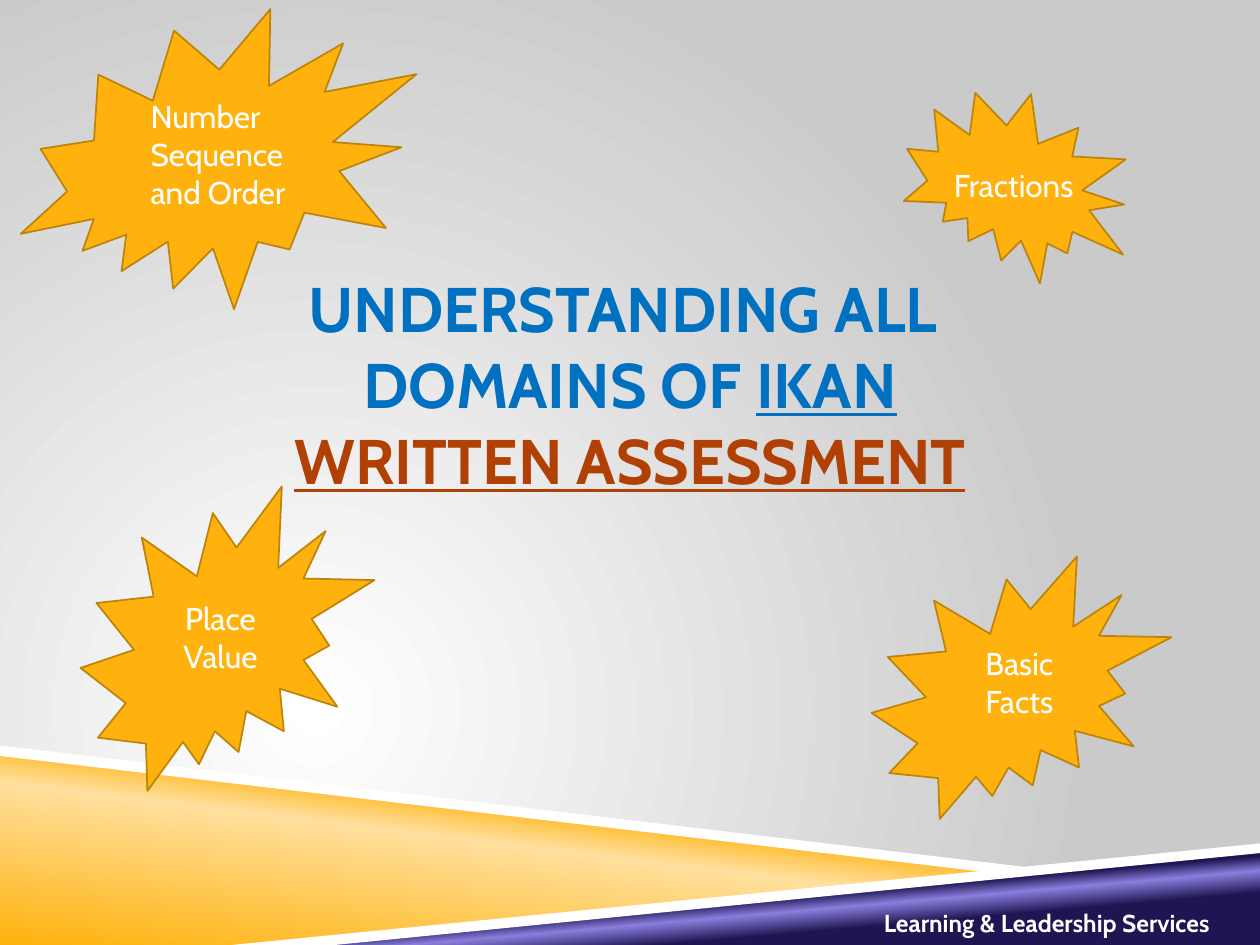
from lxml.etree import SubElement
from pptx import Presentation
from pptx.dml.color import RGBColor
from pptx.enum.shapes import MSO_SHAPE
from pptx.enum.text import MSO_ANCHOR, MSO_AUTO_SIZE, PP_ALIGN
from pptx.oxml.ns import qn
from pptx.util import Pt

WHITE = RGBColor(0xFF, 0xFF, 0xFF)
GREY = RGBColor(0xCA, 0xCA, 0xCA)
AMBER = RGBColor(0xFF, 0xB2, 0x0D)
PALE_AMBER = RGBColor(0xFF, 0xE0, 0x9E)
DARK_AMBER = RGBColor(0xBD, 0x84, 0x0A)
NAVY = RGBColor(0x1E, 0x16, 0x52)
LILAC = RGBColor(0x8B, 0x7F, 0xDD)
BLUE = RGBColor(0x00, 0x70, 0xC0)
RUST = RGBColor(0xB0, 0x40, 0x04)
FONT = "Cabin"
WIDTH, HEIGHT = 720, 540

TITLE_BOX = (36, 150, 648, 138)
TITLE_LINES = [
    [("UNDERSTANDING ALL ", BLUE, False)],
    [("DOMAINS OF ", BLUE, False), ("IKAN", BLUE, True)],
    [("WRITTEN ASSESSMENT", RUST, True)],
]
TITLE_SIZE = 36

BACKDROP_STOPS = [(0, WHITE), (100, GREY)]
AMBER_STOPS = [(0, AMBER), (52, PALE_AMBER), (66, AMBER)]
NAVY_STOPS = [(28, NAVY), (40, LILAC), (48, NAVY)]
BANDS = [
    ([(0, 430), (570, 498.5), (144, HEIGHT), (0, HEIGHT)], AMBER_STOPS, 277),
    ([(142.5, HEIGHT), (WIDTH, 484), (WIDTH, HEIGHT)], NAVY_STOPS, 265),
    ([(0, 426), (0, 432), (569, 499), (599, 497)], WHITE, None),
    ([(WIDTH, 482), (132.5, HEIGHT), (191.5, HEIGHT), (WIDTH, 487.5)], WHITE, None),
]

DOMAINS = [
    ("Basic Facts", (498, 318, 171.5, 150), 0, (556, 364.5, 78, 51), PP_ALIGN.LEFT),
    ("Place Value", (46, 278, 168, 174), 0, (87, 339, 78, 51), PP_ALIGN.CENTER),
    ("Fractions", (517.5, 50.5, 132, 114), 51.5, (538, 91.5, 86.5, 29), PP_ALIGN.LEFT),
    ("Number Sequence and Order", (43, -21.5, 174, 230.5), 49,
     (79, 52, 102, 73), PP_ALIGN.LEFT),
]
FOOTER = ("Learning & Leadership Services", (498, 515.5, 222, 24.5))


def points(values):
    return [Pt(value) for value in values]


def apply(target, **formats):
    for name, value in formats.items():
        setattr(target, name, value)


def style_run(run, size, color, **formats):
    apply(run.font, name=FONT, size=Pt(size), **formats)
    run.font.color.rgb = color


def set_gradient(fill, gradient, stops):
    fill.gradient()
    stop_list = gradient().find(qn("a:gsLst"))
    for old in list(stop_list):
        stop_list.remove(old)
    for position, color in stops:
        stop = SubElement(stop_list, qn("a:gs"), pos=str(position * 1000))
        SubElement(stop, qn("a:srgbClr"), val=str(color))


def paint_background(slide):
    def gradient():
        return next(slide.element.iter(qn("a:gradFill")))

    set_gradient(slide.background.fill, gradient, BACKDROP_STOPS)
    linear = gradient().find(qn("a:lin"))
    if linear is not None:
        gradient().remove(linear)
    circle = SubElement(gradient(), qn("a:path"), path="circle")
    SubElement(circle, qn("a:fillToRect"), l="50000", t="100000", r="100000", b="50000")


def add_band(slide, corners, paint, angle):
    start, *rest = [points(corner) for corner in corners]
    builder = slide.shapes.build_freeform(*start)
    builder.add_line_segments(rest)
    band = builder.convert_to_shape()
    band.shadow.inherit = False
    band.line.fill.background()
    if angle is None:
        band.fill.solid()
        band.fill.fore_color.rgb = paint
    else:
        set_gradient(band.fill, lambda: next(band.element.iter(qn("a:gradFill"))), paint)
        band.fill.gradient_angle = 360 - angle


def add_seal(slide, box, rotation):
    seal = slide.shapes.add_shape(MSO_SHAPE.EXPLOSION2, *points(box))
    seal.shadow.inherit = False
    seal.rotation = rotation
    seal.fill.solid()
    seal.fill.fore_color.rgb = AMBER
    seal.line.color.rgb = DARK_AMBER
    seal.line.width = Pt(1)


def add_label(slide, text, box, size, alignment=PP_ALIGN.LEFT, **formats):
    frame = slide.shapes.add_textbox(*points(box)).text_frame
    apply(frame, word_wrap=True, auto_size=MSO_AUTO_SIZE.SHAPE_TO_FIT_TEXT)
    paragraph = frame.paragraphs[0]
    paragraph.alignment = alignment
    run = paragraph.add_run()
    run.text = text
    style_run(run, size, WHITE, **formats)


def fill_title(title):
    apply(title, **dict(zip(("left", "top", "width", "height"), points(TITLE_BOX))))
    frame = title.text_frame
    apply(frame, word_wrap=True, auto_size=MSO_AUTO_SIZE.NONE,
          vertical_anchor=MSO_ANCHOR.MIDDLE, margin_left=0, margin_right=0)
    paragraph = frame.paragraphs[0]
    paragraph.alignment = PP_ALIGN.CENTER
    for index, line in enumerate(TITLE_LINES):
        if index:
            paragraph.add_line_break()
        for text, color, underline in line:
            run = paragraph.add_run()
            run.text = text
            style_run(run, TITLE_SIZE, color, bold=True, underline=underline)
    for line_break in title.element.iter(qn("a:br")):
        SubElement(line_break, qn("a:rPr"), sz=str(TITLE_SIZE * 100))


def main():
    deck = Presentation()
    apply(deck, slide_width=Pt(WIDTH), slide_height=Pt(HEIGHT))
    slide = deck.slides.add_slide(deck.slide_layouts[5])
    paint_background(slide)
    for band in BANDS:
        add_band(slide, *band)
    fill_title(slide.shapes.title)
    footer_text, footer_box = FOOTER
    add_label(slide, footer_text, footer_box, 14, bold=True)
    for text, seal_box, rotation, label_box, alignment in DOMAINS:
        add_seal(slide, seal_box, rotation)
        add_label(slide, text, label_box, 18, alignment)
    deck.save("out.pptx")


if __name__ == "__main__":
    main()
